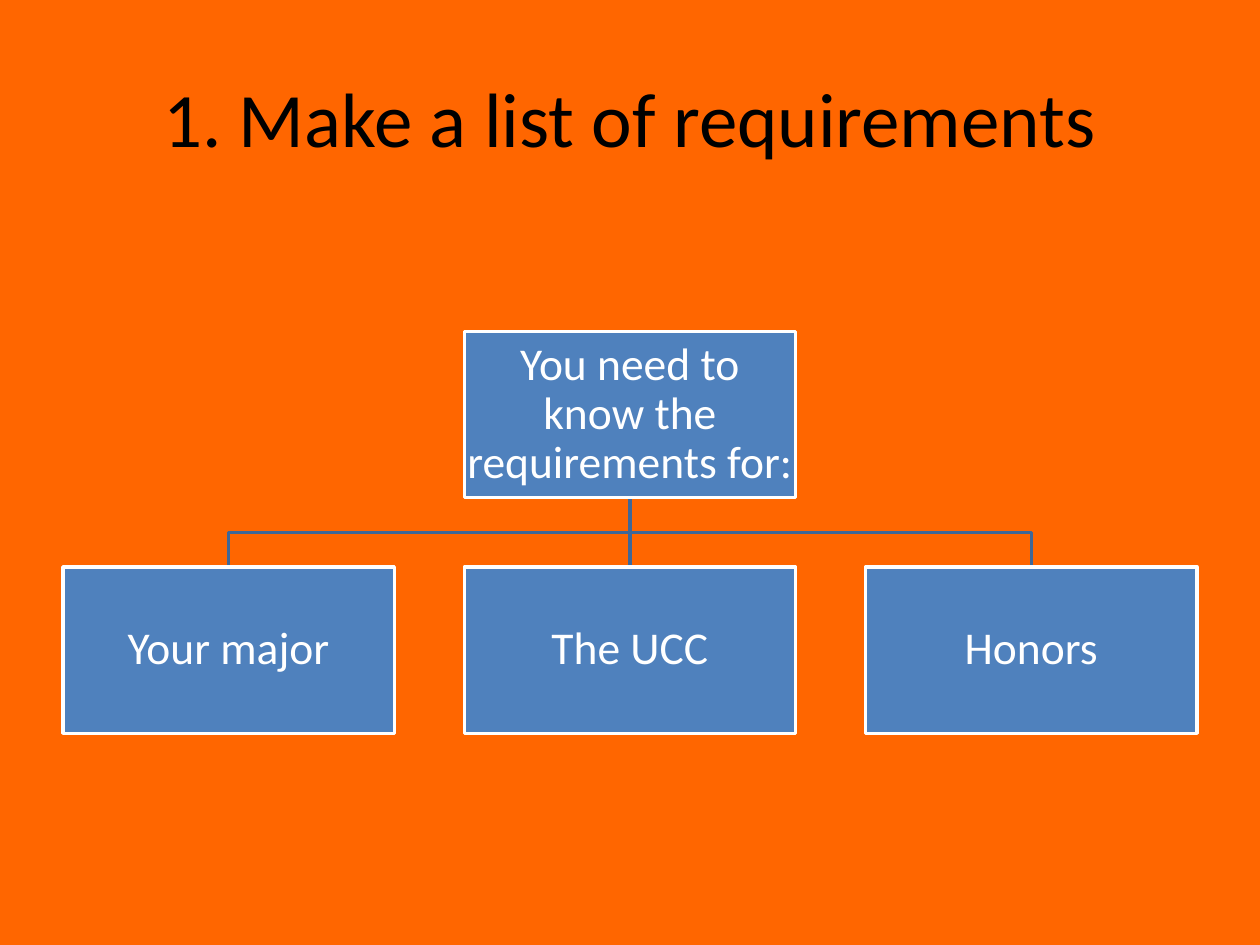
from dataclasses import dataclass

from lxml.etree import SubElement
from pptx import Presentation
from pptx.dml.color import RGBColor
from pptx.enum.shapes import MSO_CONNECTOR, MSO_SHAPE
from pptx.enum.text import MSO_ANCHOR, PP_ALIGN
from pptx.oxml.ns import qn
from pptx.slide import Slide
from pptx.text.text import TextFrame
from pptx.util import Inches, Pt

SLIDE_WIDTH, SLIDE_HEIGHT = 10, 7.5
MARGIN = 0.5
BOX_WIDTH, BOX_HEIGHT = 2.63, 1.32
ROOT_TOP, CHILD_TOP = 2.63, 4.5
CENTER = SLIDE_WIDTH / 2
ORANGE, BLUE, DARK_BLUE = "FF6600", "4F81BD", "3F6797"
WHITE, BLACK = "FFFFFF", "000000"


@dataclass
class Box:
    label: str
    center: float
    top: float


def rgb(color: str) -> RGBColor:
    return RGBColor.from_string(color)


def write_text(frame: TextFrame, text: str, size: float, color: str) -> None:
    frame.word_wrap = True
    frame.vertical_anchor = MSO_ANCHOR.MIDDLE
    paragraph = frame.paragraphs[0]
    paragraph.alignment = PP_ALIGN.CENTER
    run = paragraph.add_run()
    run.text = text
    run.font.name = "Calibri"
    run.font.size = Pt(size)
    run.font.color.rgb = rgb(color)


def draw_title(slide: Slide, text: str) -> None:
    title = slide.shapes.add_textbox(
        Inches(MARGIN), Inches(0.3), Inches(SLIDE_WIDTH - 2 * MARGIN), Inches(1.25)
    )
    write_text(title.text_frame, text, 44, BLACK)


def draw_box(slide: Slide, box: Box) -> None:
    rectangle = slide.shapes.add_shape(
        MSO_SHAPE.RECTANGLE,
        Inches(box.center - BOX_WIDTH / 2), Inches(box.top),
        Inches(BOX_WIDTH), Inches(BOX_HEIGHT),
    )
    rectangle.shadow.inherit = False
    rectangle.fill.solid()
    rectangle.fill.fore_color.rgb = rgb(BLUE)
    rectangle.line.color.rgb = rgb(WHITE)
    rectangle.line.width = Pt(2)
    frame = rectangle.text_frame
    frame.margin_left = frame.margin_right = Inches(0.02)
    frame.margin_top = frame.margin_bottom = Inches(0.02)
    write_text(frame, box.label, 26, WHITE)
    frame.paragraphs[0].line_spacing = 0.9


def draw_branch(slide: Slide, parent: Box, child: Box) -> None:
    """Join two boxes, with a bend halfway when they are not aligned."""
    start = parent.top + BOX_HEIGHT
    if child.center == parent.center:
        branch = slide.shapes.add_connector(
            MSO_CONNECTOR.STRAIGHT,
            Inches(parent.center), Inches(start),
            Inches(child.center), Inches(child.top),
        )
        SubElement(branch._element.spPr, qn("a:effectLst"))
    else:
        bend = (start + child.top) / 2
        corners = [
            (parent.center, bend), (child.center, bend), (child.center, child.top)
        ]
        builder = slide.shapes.build_freeform(Inches(parent.center), Inches(start))
        builder.add_line_segments(
            [(Inches(x), Inches(y)) for x, y in corners], close=False
        )
        branch = builder.convert_to_shape()
        branch.shadow.inherit = False
        branch.fill.background()
    branch.line.color.rgb = rgb(DARK_BLUE)
    branch.line.width = Pt(2)


def main() -> None:
    presentation = Presentation()
    presentation.slide_width = Inches(SLIDE_WIDTH)
    presentation.slide_height = Inches(SLIDE_HEIGHT)
    slide = presentation.slides.add_slide(presentation.slide_layouts[6])
    slide.background.fill.solid()
    slide.background.fill.fore_color.rgb = rgb(ORANGE)

    draw_title(slide, "1. Make a list of requirements")

    root = Box("You need to know the requirements for:", CENTER, ROOT_TOP)
    pitch = CENTER - MARGIN - BOX_WIDTH / 2
    children = [
        Box(label, CENTER + column * pitch, CHILD_TOP)
        for column, label in enumerate(["Your major", "The UCC", "Honors"], start=-1)
    ]
    for child in reversed(children):
        draw_branch(slide, root, child)
    for box in [root, *children]:
        draw_box(slide, box)

    presentation.save("out.pptx")


if __name__ == "__main__":
    main()
